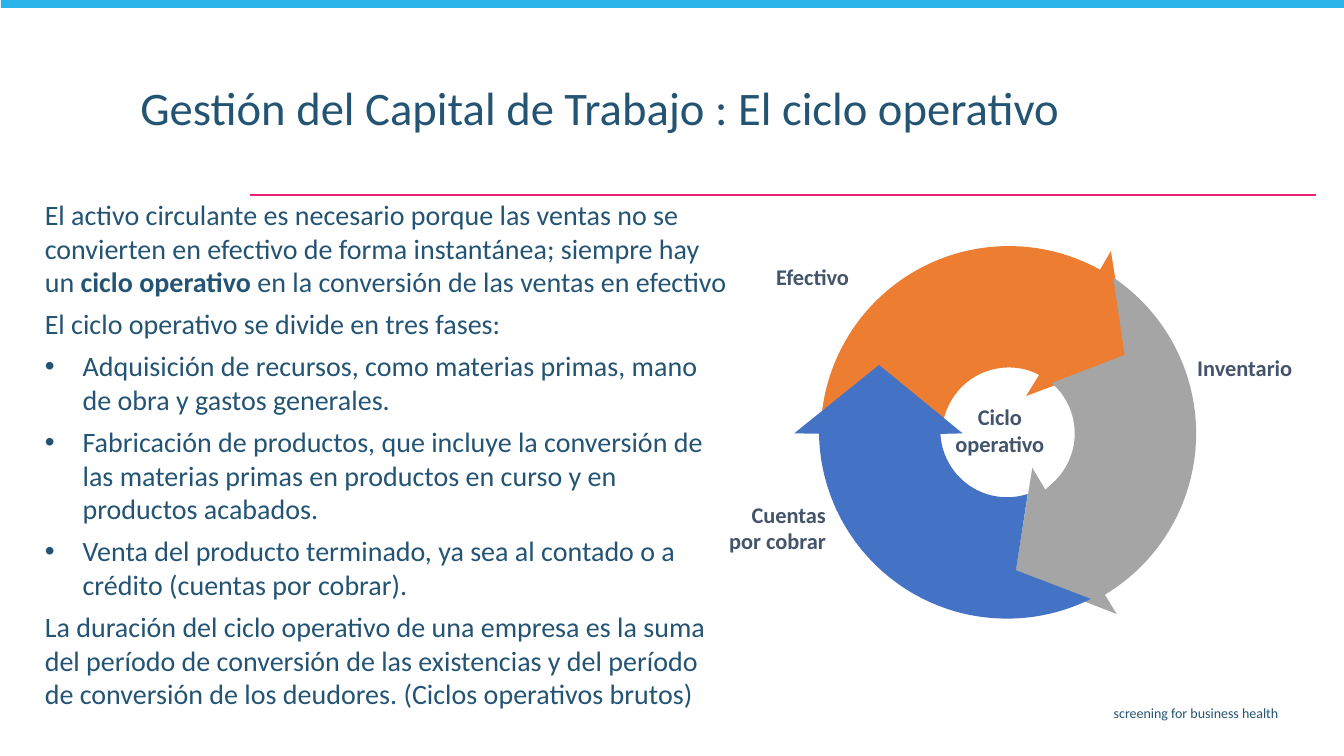
from math import cos, radians, sin, tan

from lxml.etree import SubElement
from pptx import Presentation
from pptx.dml.color import RGBColor
from pptx.enum.shapes import MSO_CONNECTOR, MSO_SHAPE
from pptx.enum.text import MSO_ANCHOR, PP_ALIGN
from pptx.oxml import parse_xml
from pptx.oxml.ns import nsdecls, qn
from pptx.util import Inches, Pt

COLUMNS = 32
CELL = Inches(13.333) / COLUMNS
COLORS = {
    "text": "245473",
    "label": "44546A",
    "bar": "29B3E8",
    "rule": "EC2179",
    "cash": "ED7D31",
    "inventory": "A5A5A5",
    "receivables": "4472C4",
}
OUTER_RADIUS = 4.48
INNER_RADIUS = 1.59

TITLE = "Gestión del Capital de Trabajo : El ciclo operativo"
INTRODUCTION = [
    "El activo circulante es necesario porque las ventas no se convierten en "
    "efectivo de forma instantánea; siempre hay un ",
    ("ciclo operativo ",),
    "en la conversión de las ventas en efectivo",
]
PHASES = [
    "Adquisición de recursos, como materias primas, mano de obra y gastos generales.",
    "Fabricación de productos, que incluye la conversión de las materias primas "
    "en productos en curso y en productos acabados.",
    "Venta del producto terminado, ya sea al contado o a crédito (cuentas por cobrar).",
]
CONCLUSION = (
    "La duración del ciclo operativo de una empresa es la suma del período de "
    "conversión de las existencias y del período de conversión de los deudores. "
    "(Ciclos operativos brutos)"
)


def grid(*cells):
    return [round(cell * CELL) for cell in cells]


def color(name):
    return RGBColor.from_string(COLORS[name])


def paint(shape, name):
    shape.fill.solid()
    shape.fill.fore_color.rgb = color(name)
    shape.line.fill.background()
    shape.shadow.inherit = False


def add_bullet(paragraph):
    properties = paragraph._p.get_or_add_pPr()
    properties.set("marL", str(Inches(0.375)))
    properties.set("indent", str(-Inches(0.375)))
    SubElement(properties, qn("a:buFont")).set("typeface", "Arial")
    SubElement(properties, qn("a:buChar")).set("char", "•")


def write(frame, paragraphs, size=20, name="text", bold=False, align=PP_ALIGN.LEFT,
          anchor=MSO_ANCHOR.TOP, spacing=None, before=0, bulleted=(), insets=(0.1, 0.05)):
    """Each paragraph is a string or a list of runs; a run in a tuple is bold."""
    frame.word_wrap = True
    frame.vertical_anchor = anchor
    frame.margin_left = frame.margin_right = Inches(insets[0])
    frame.margin_top = frame.margin_bottom = Inches(insets[1])
    for index, content in enumerate(paragraphs):
        paragraph = frame.add_paragraph() if index else frame.paragraphs[0]
        paragraph.alignment = align
        paragraph.line_spacing = spacing
        paragraph.space_before = Pt(before if index else 0)
        if content in bulleted:
            add_bullet(paragraph)
        for part in [content] if isinstance(content, str) else content:
            emphasized = isinstance(part, tuple)
            run = paragraph.add_run()
            run.text = part[0] if emphasized else part
            run.font.name = "Calibri"
            run.font.size = Pt(size)
            run.font.bold = bold or emphasized
            run.font.color.rgb = color(name)


def add_text(slide, box, paragraphs, **style):
    write(slide.shapes.add_textbox(*grid(*box)).text_frame, paragraphs, **style)


def add_title(slide, box, text):
    title = slide.shapes.title
    title.left, title.top, title.width, title.height = grid(*box)
    write(title.text_frame, [text], size=33.3, spacing=0.9)


def add_label(slide, box, text, align):
    add_text(slide, box, [text], size=16, name="label", bold=True, align=align,
             anchor=MSO_ANCHOR.BOTTOM)


def add_bar(slide, box):
    paint(slide.shapes.add_shape(MSO_SHAPE.RECTANGLE, *grid(*box)), "bar")


def add_rule(slide, start, end):
    rule = slide.shapes.add_connector(MSO_CONNECTOR.STRAIGHT, *grid(*start, *end))
    rule.line.color.rgb = color("rule")
    rule.line.width = Pt(1.5)
    SubElement(rule._element.spPr, qn("a:effectLst"))


def arc(center, radius, angles):
    """Bézier points of an arc: its start, then two handles and an end per piece."""
    def spot(angle, reach):
        angle = radians(angle)
        return (center[0] + radius * (cos(angle) - reach * sin(angle)),
                center[1] + radius * (sin(angle) + reach * cos(angle)))

    points = [spot(angles[0], 0)]
    for start, end in zip(angles, angles[1:]):
        reach = 4 / 3 * tan(radians(end - start) / 4)
        points += [spot(start, reach), spot(end, -reach), spot(end, 0)]
    return points


def bend(lines):
    """Join each three line segments into one cubic curve."""
    for first in range(0, len(lines), 3):
        curve = parse_xml(f"<a:cubicBezTo {nsdecls('a')}/>")
        lines[first].addprevious(curve)
        for line in lines[first:first + 3]:
            curve.append(line[0])
            line.getparent().remove(line)


def add_ring_arrow(slide, name, center, outer, head, inner, tail):
    outer_arc = arc(center, OUTER_RADIUS, outer)
    inner_arc = arc(center, INNER_RADIUS, inner)
    corners = [grid(*point) for point in [*outer_arc, *head, *inner_arc, *tail]]
    builder = slide.shapes.build_freeform(*corners[0])
    builder.add_line_segments(corners[1:], close=True)
    shape = builder.convert_to_shape()
    lines = list(shape._element.iter(qn("a:lnTo")))
    inner_start = len(outer_arc) + len(head)
    bend(lines[:len(outer_arc) - 1])
    bend(lines[inner_start:inner_start + len(inner_arc) - 1])
    paint(shape, name)


def add_cycle(slide):
    add_ring_arrow(slide, "cash", (24.02, 10.34), (188, 270, 299),
                   [(26.45, 5.98), (26.86, 8.52), (24.43, 9.43), (24.74, 8.93)],
                   (293, 270, 191), [(20.95, 8.86), (19.54, 10.01)])
    add_ring_arrow(slide, "inventory", (24, 10.32), (-56, 0, 59),
                   [(26.59, 14.62), (24.17, 13.68), (24.58, 11.14), (24.89, 11.66)],
                   (50, 0, -49), [(26.78, 8.45)])
    add_ring_arrow(slide, "receivables", (23.98, 10.25), (65, 90, 179),
                   [(18.91, 10.32), (20.93, 8.69), (22.92, 10.32)],
                   (177, 90, 72), [(24.19, 13.58), (25.97, 14.26)])
    add_label(slide, (17.52, 6.14, 2.93, 0.89), "Efectivo", PP_ALIGN.RIGHT)
    add_label(slide, (16.97, 11.78, 2.93, 1.54), "Cuentas por cobrar", PP_ALIGN.RIGHT)
    add_label(slide, (28.27, 8.3, 2.93, 0.89), "Inventario", PP_ALIGN.LEFT)
    add_label(slide, (22.34, 9.46, 2.93, 1.54), "Ciclo operativo", PP_ALIGN.CENTER)


def main():
    presentation = Presentation()
    presentation.slide_width = Inches(13.333)
    presentation.slide_height = Inches(7.5)
    slide = presentation.slides.add_slide(presentation.slide_layouts[5])
    add_rule(slide, (31.34, 4.64), (5.95, 4.64))
    add_bar(slide, (0.02, -0.05, 32.02, 0.24))
    add_text(slide, (8.76, 16.66, 21.91, 0.7), ["screening for business health"],
             size=10, align=PP_ALIGN.RIGHT)
    add_title(slide, (3.1, 1.9, 23.23, 1.82), TITLE)
    add_text(slide, (0.85, 4.61, 16.68, 12.53),
             [INTRODUCTION, "El ciclo operativo se divide en tres fases:", *PHASES, CONCLUSION],
             before=6, bulleted=PHASES, insets=(0.09, 0.04))
    add_cycle(slide)
    presentation.save("out.pptx")


if __name__ == "__main__":
    main()
